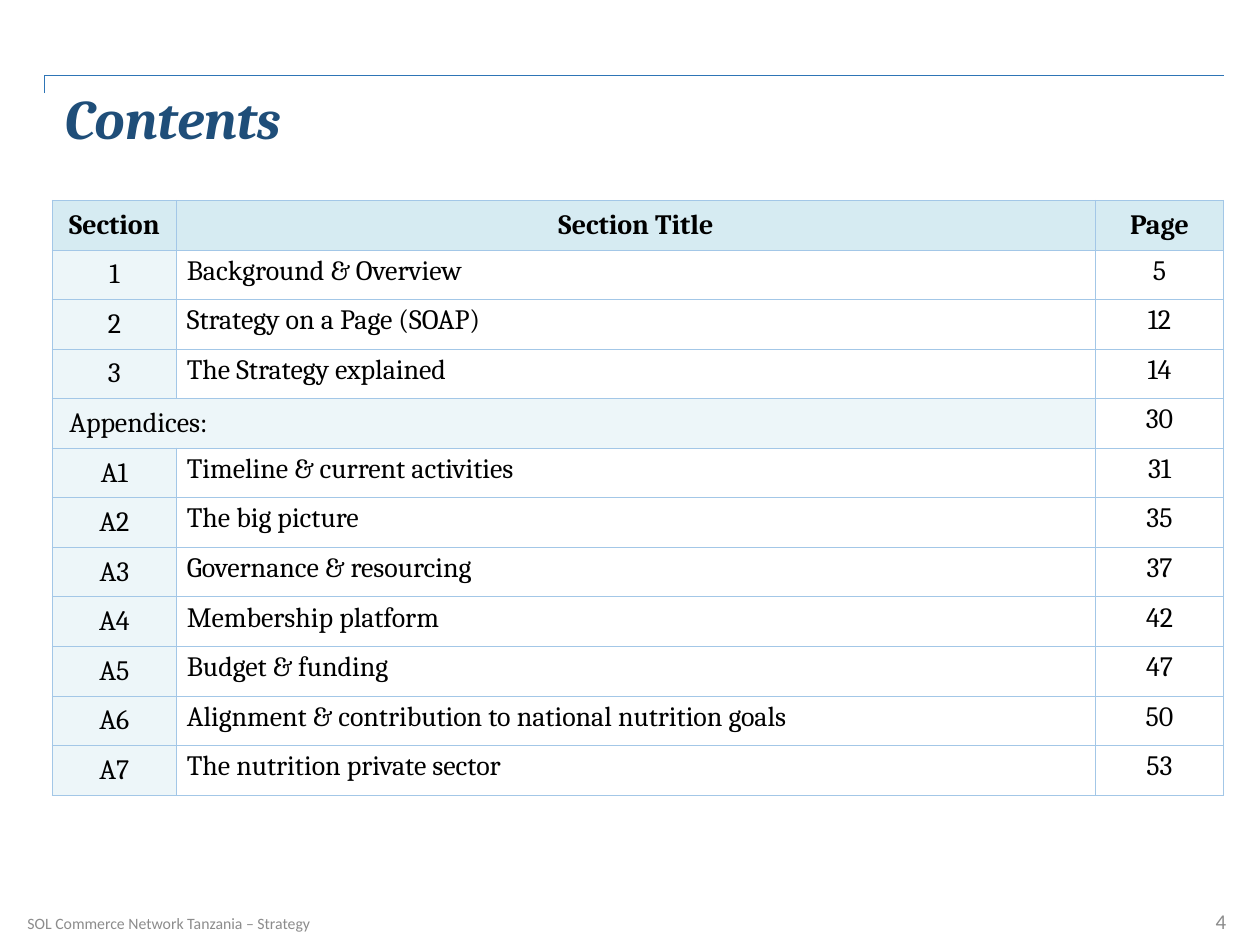
from lxml.etree import SubElement
from pptx import Presentation
from pptx.dml.color import RGBColor
from pptx.enum.shapes import MSO_CONNECTOR
from pptx.enum.text import MSO_ANCHOR as ANCHOR, PP_ALIGN as ALIGN
from pptx.oxml import parse_xml
from pptx.oxml.ns import nsdecls, qn
from pptx.util import Pt

HEADER = ("Section", "Section Title", "Page")
SECTIONS = [
    ("1", "Background & Overview", "5"),
    ("2", "Strategy on a Page (SOAP)", "12"),
    ("3", "The Strategy explained", "14"),
    ("Appendices:", None, "30"),
    ("A1", "Timeline & current activities", "31"),
    ("A2", "The big picture", "35"),
    ("A3", "Governance & resourcing", "37"),
    ("A4", "Membership platform", "42"),
    ("A5", "Budget & funding", "47"),
    ("A6", "Alignment & contribution to national nutrition goals", "50"),
    ("A7", "The nutrition private sector", "53"),
]
COL_WIDTHS = (71.3, 524.9, 73.4)


def rgb(value):
    """Turn a hex string into a colour."""
    return RGBColor.from_string(value)


def write(tf, text, size=16, font="Cambria", color="000000",
          bold=False, italic=False, align=ALIGN.LEFT):
    """Put one formatted paragraph into a text frame."""
    p = tf.paragraphs[0]
    p.alignment = align
    r = p.add_run()
    r.text = text
    f = r.font
    f.size, f.name, f.bold, f.italic = Pt(size), font, bold, italic
    f.color.rgb = rgb(color)


def add_title(s, x, y, w, h):
    """Place the title and the angled rule above it."""
    sp = s.shapes.title
    sp.left, sp.top, sp.width, sp.height = Pt(x), Pt(y), Pt(w), Pt(h)
    sp.text_frame.vertical_anchor = ANCHOR.TOP
    write(sp.text_frame, "Contents", size=32, color="1F4E79", bold=True, italic=True)

    rule = s.shapes.add_connector(MSO_CONNECTOR.ELBOW, Pt(x - 4), Pt(y + 9.4),
                                  Pt(x + w - 4), Pt(y - 0.8))
    rule.line.color.rgb = rgb("2E75B6")
    rule.line.width = Pt(0.5)
    sp_pr = rule._element.spPr
    guides = sp_pr.find(qn("a:prstGeom")).get_or_add_avLst()
    SubElement(guides, qn("a:gd"), name="adj1", fmla="val 0")
    SubElement(sp_pr, qn("a:effectLst"))


def add_borders(cell, color="A3C7E7", width=0.5):
    """Draw the four borders of a cell."""
    tc_pr = cell._tc.get_or_add_tcPr()
    for i, side in enumerate(("lnL", "lnR", "lnT", "lnB")):
        tc_pr.insert(i, parse_xml(
            f'<a:{side} {nsdecls("a")} w="{Pt(width)}"><a:solidFill>'
            f'<a:srgbClr val="{color}"/></a:solidFill></a:{side}>'))


def format_cell(cell, fill, left=2.9, anchor=ANCHOR.TOP):
    """Set the fill, margins, anchor and borders of a cell."""
    cell.fill.solid()
    cell.fill.fore_color.rgb = rgb(fill)
    cell.margin_left = Pt(left)
    cell.margin_right = cell.margin_top = cell.margin_bottom = Pt(2.9)
    cell.vertical_anchor = anchor
    add_borders(cell)


def add_contents(s, x, y, w, h):
    """Place the table of sections and pages."""
    rows = [HEADER] + SECTIONS
    table = s.shapes.add_table(len(rows), len(HEADER), Pt(x), Pt(y), Pt(w), Pt(h)).table
    table.first_row = table.horz_banding = False
    for col, width in zip(table.columns, COL_WIDTHS):
        col.width = Pt(width)
    for i, values in enumerate(rows):
        table.rows[i].height = Pt(h / len(rows))
        is_header, is_group = i == 0, values[1] is None
        for j, text in enumerate(values):
            cell = table.cell(i, j)
            is_label = j == 0 or (is_group and j == 1)
            is_name = j == 1 and not is_header
            fill = "D6EBF2" if is_header else "EDF6F9" if is_label else "FFFFFF"
            left = 9.9 if is_group and j == 0 else 5.8 if is_name else 2.9
            anchor = ANCHOR.MIDDLE if is_header or is_label else ANCHOR.TOP
            format_cell(cell, fill, left, anchor)
            if text:
                is_left = is_name or (is_group and j == 0)
                write(cell.text_frame, text, bold=is_header,
                      align=ALIGN.LEFT if is_left else ALIGN.CENTER)
        if is_group:
            table.cell(i, 0).merge(table.cell(i, 1))


def add_note(s, x, y, w, h, text, **fmt):
    """Place one grey text box of the footer."""
    tf = s.shapes.add_textbox(Pt(x), Pt(y), Pt(w), Pt(h)).text_frame
    tf.word_wrap = True
    tf.vertical_anchor = ANCHOR.MIDDLE
    write(tf, text, font="Calibri", color="8C8C8C", **fmt)


def add_footer(s, x, y, w, h):
    """Place the document name and the page number."""
    add_note(s, x, y + 1.4, 243.4, h, "SOL Commerce Network Tanzania – Strategy", size=9)
    add_note(s, x + w - 162, y, 162, h, "4", size=12, align=ALIGN.RIGHT)


def main():
    """Build and save the contents slide."""
    prs = Presentation()
    prs.slide_width, prs.slide_height = Pt(720), Pt(540)
    s = prs.slides.add_slide(prs.slide_layouts[5])
    add_footer(s, 8.6, 511.9, 699.2, 28.8)
    add_title(s, 29.7, 43.9, 673.9, 53.3)
    add_contents(s, 29.7, 114.5, sum(COL_WIDTHS), 340)
    prs.save("out.pptx")


if __name__ == "__main__":
    main()
